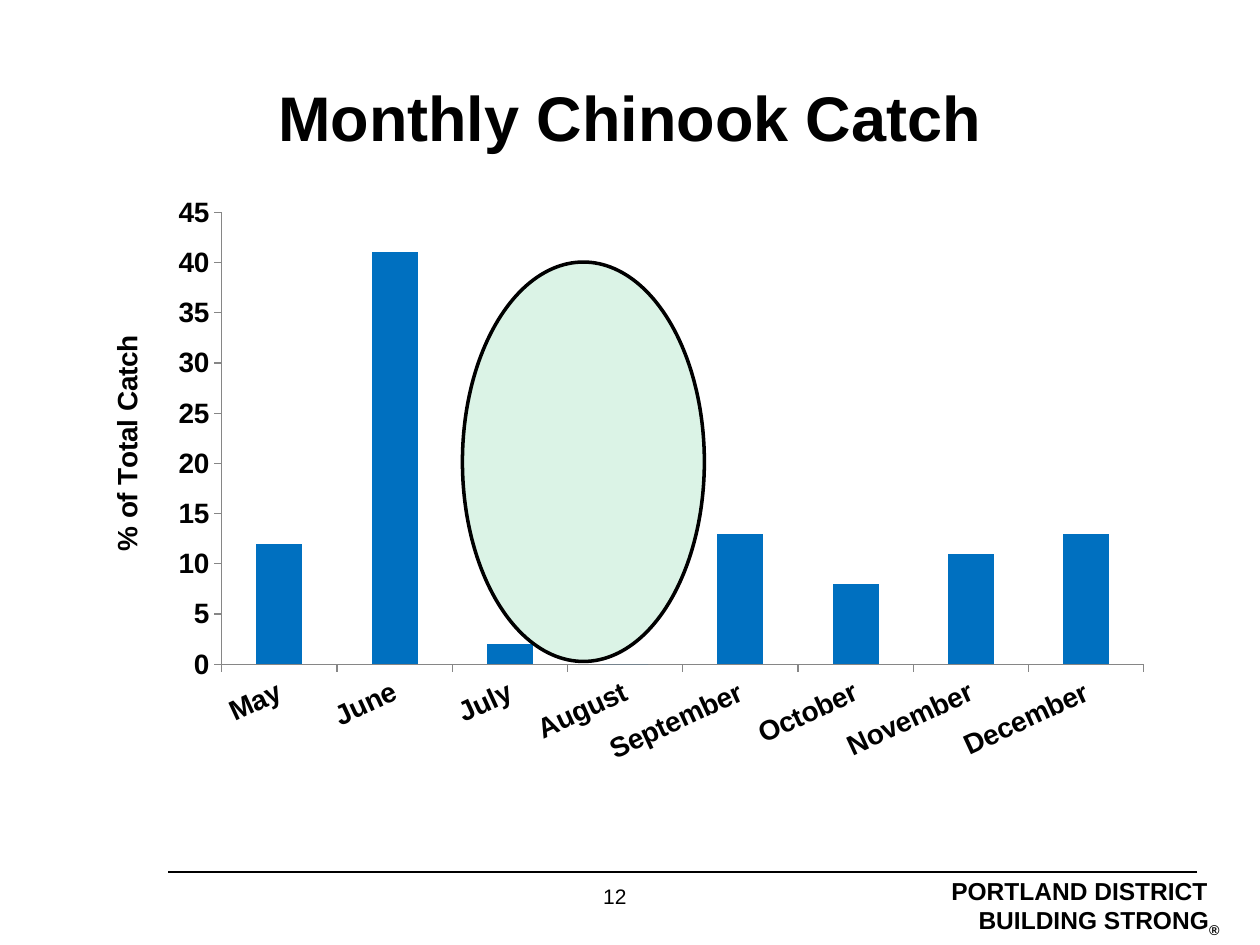
from lxml.etree import SubElement
from pptx import Presentation
from pptx.chart.data import CategoryChartData
from pptx.dml.color import RGBColor
from pptx.enum.chart import XL_CHART_TYPE, XL_TICK_MARK
from pptx.enum.shapes import MSO_CONNECTOR, MSO_SHAPE
from pptx.enum.text import MSO_ANCHOR, PP_ALIGN
from pptx.oxml import parse_xml
from pptx.oxml.ns import nsdecls, qn
from pptx.util import Inches, Pt

COLORS = {"text": "000000", "bar": "0070C0", "axis": "868686",
          "plot": "FFFFFF", "highlight": "00B050"}
FONT = "Arial"
CATCH = {"May": 12, "June": 41, "July": 2, "August": 0, "September": 13,
         "October": 8, "November": 11, "December": 13}


def color(name):
    return RGBColor.from_string(COLORS[name])


def set_font(font, size, bold=True):
    font.name, font.size, font.bold = FONT, Pt(size), bold
    font.color.rgb = color("text")


def inches(*lengths):
    return [Inches(length) for length in lengths]


def add_title(page, text):
    title = page.shapes.title
    title.left, title.top, title.width, title.height = inches(0.5, 0.3, 9, 1.25)
    title.text_frame.vertical_anchor = MSO_ANCHOR.MIDDLE
    para = title.text_frame.paragraphs[0]
    para.text = text
    para.alignment = PP_ALIGN.CENTER
    set_font(para.font, 36)


def add_label(page, text, place, size, align, bold=True, margin=0.0):
    box = page.shapes.add_textbox(*inches(*place))
    frame = box.text_frame
    frame.word_wrap = True
    frame.margin_left = frame.margin_right = Inches(margin * 2)
    frame.margin_top = frame.margin_bottom = Inches(margin)
    para = frame.paragraphs[0]
    para.text = text
    para.alignment = align
    set_font(para.font, size, bold)
    return para


def add_rule(page, start, end):
    rule = page.shapes.add_connector(MSO_CONNECTOR.STRAIGHT, *inches(*start, *end))
    rule.line.color.rgb = color("text")
    rule.line.width = Pt(0.75)
    SubElement(rule._element.spPr, qn("a:effectLst"))


def manual_layout(x, y, size=None):
    """Layout in fractions of the chart; a size fixes the inner plot area."""
    values = [("xMode", "edge"), ("yMode", "edge"), ("x", x), ("y", y)]
    if size:
        values = [("layoutTarget", "inner")] + values + [("w", size[0]), ("h", size[1])]
    items = "".join(f'<c:{tag} val="{value}"/>' for tag, value in values)
    return parse_xml(f'<c:layout {nsdecls("c")}><c:manualLayout>{items}'
                     '</c:manualLayout></c:layout>')


def place_plot(chart):
    plot_area = chart._chartSpace.chart.plotArea
    for layout in plot_area.findall(qn("c:layout")):
        plot_area.remove(layout)
    plot_area.insert(0, manual_layout(0.127, 0.054, (0.853, 0.729)))
    plot_area.append(parse_xml(
        f'<c:spPr {nsdecls("c", "a")}><a:solidFill><a:srgbClr val="{COLORS["plot"]}"/>'
        '</a:solidFill></c:spPr>'))


def format_axis(axis):
    axis.has_major_gridlines = False
    axis.major_tick_mark = XL_TICK_MARK.OUTSIDE
    axis.minor_tick_mark = XL_TICK_MARK.NONE
    axis.format.line.color.rgb = color("axis")
    axis.format.line.width = Pt(0.75)
    set_font(axis.tick_labels.font, 16)


def add_catch_chart(page):
    data = CategoryChartData(number_format="0")
    data.categories = list(CATCH)
    data.add_series("Series 1", list(CATCH.values()))
    chart = page.shapes.add_chart(XL_CHART_TYPE.COLUMN_CLUSTERED,
                                  *inches(0.67, 1.42, 8.58, 4.92), data).chart
    set_font(chart.font, 10)
    chart.has_legend = chart.has_title = False
    place_plot(chart)

    # Bars
    plot = chart.plots[0]
    plot.gap_width = 150
    plot.vary_by_categories = False
    fill = plot.series[0].format.fill
    fill.solid()
    fill.fore_color.rgb = color("bar")

    # Axes, with slanted month names
    months, share = chart.category_axis, chart.value_axis
    for axis in (months, share):
        format_axis(axis)
    months._element.txPr.find(qn("a:bodyPr")).set("rot", str(-25 * 60000))
    share.minimum_scale, share.maximum_scale, share.major_unit = 0, 45, 5
    share.tick_labels.number_format = "0"
    share.tick_labels.number_format_is_linked = False

    # Value axis title
    title = share.axis_title
    para = title.text_frame.paragraphs[0]
    para.text = "% of Total Catch"
    set_font(para.font, 16)
    body = title.text_frame._txBody.find(qn("a:bodyPr"))
    body.set("rot", str(-90 * 60000))
    body.set("vert", "horz")
    for layout in title._element.findall(qn("c:layout")):
        title._element.remove(layout)
    title._element.find(qn("c:tx")).addnext(manual_layout(0.018, 0.244))


def add_highlight(page):
    oval = page.shapes.add_shape(MSO_SHAPE.OVAL, *inches(3.67, 2.08, 1.92, 3.17))
    oval.shadow.inherit = False
    oval.fill.solid()
    oval.fill.fore_color.rgb = color("highlight")
    tint = oval._element.spPr.find(qn("a:solidFill"))[0]
    SubElement(tint, qn("a:alpha")).set("val", "14000")
    oval.line.color.rgb = color("text")
    oval.line.width = Pt(2)


def add_footer(page):
    motto = add_label(page, "BUILDING STRONG", (6.83, 7.18, 2.85, 0.23), 14,
                      PP_ALIGN.RIGHT)
    span = motto.add_run()
    span.text = "®"
    span.font._element.set("baseline", "-25000")
    add_rule(page, (9.5, 6.92), (1.33, 6.92))
    add_label(page, "PORTLAND DISTRICT", (7.55, 6.95, 2.27, 0.24), 14, PP_ALIGN.LEFT)
    add_label(page, "12", (4.17, 6.96, 1.42, 0.3), 12, PP_ALIGN.CENTER,
              bold=False, margin=0.05)


def main():
    deck = Presentation()
    deck.slide_width, deck.slide_height = inches(10, 7.5)
    page = deck.slides.add_slide(deck.slide_layouts[5])
    add_footer(page)
    add_title(page, "Monthly Chinook Catch")
    add_catch_chart(page)
    add_highlight(page)
    deck.save("out.pptx")


if __name__ == "__main__":
    main()
